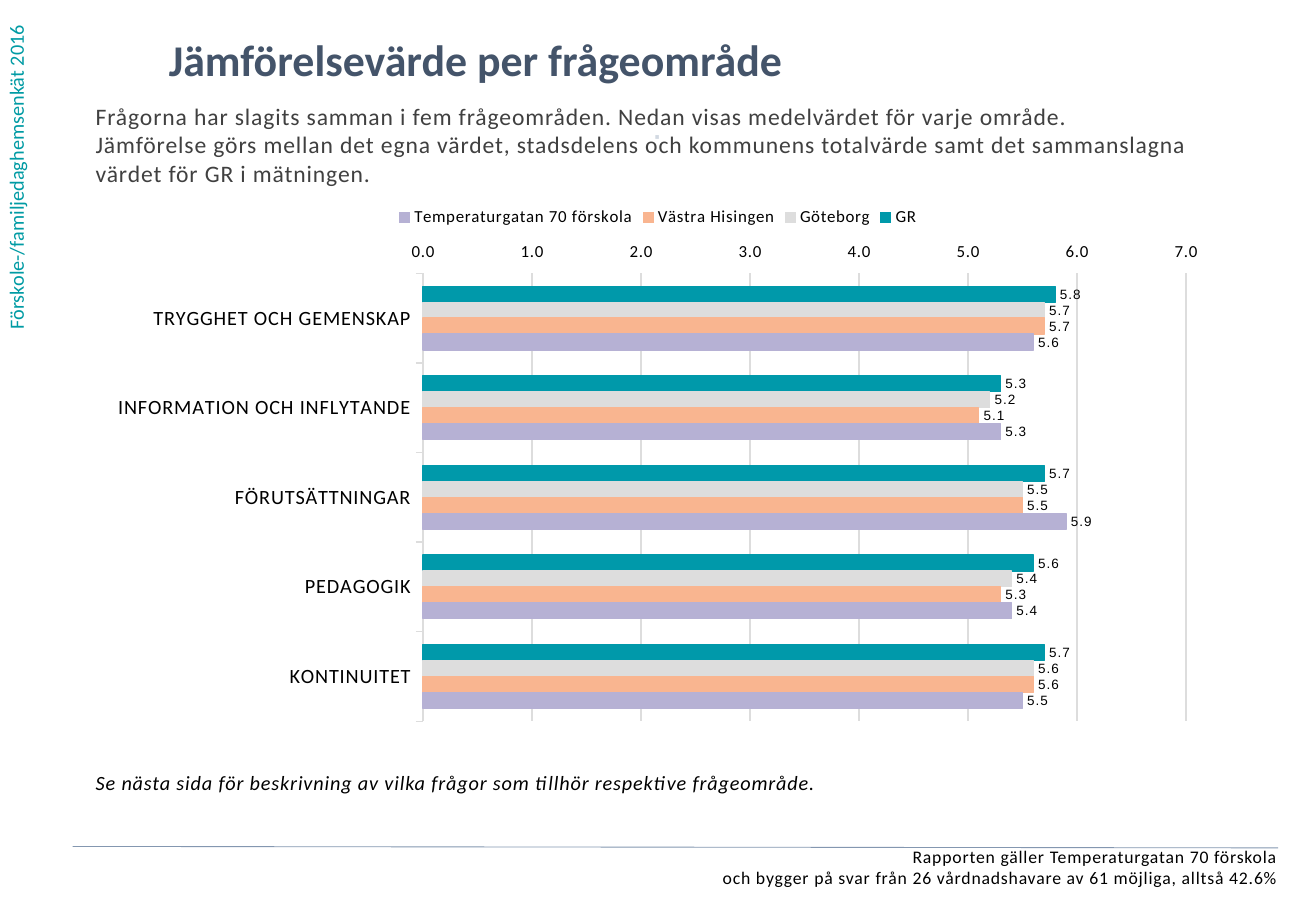
from pptx import Presentation
from pptx.chart.data import CategoryChartData
from pptx.dml.color import RGBColor
from pptx.enum.chart import (XL_AXIS_CROSSES, XL_CHART_TYPE, XL_LABEL_POSITION,
                             XL_LEGEND_POSITION, XL_TICK_MARK)
from pptx.enum.shapes import MSO_CONNECTOR
from pptx.enum.text import PP_ALIGN
from pptx.oxml import parse_xml
from pptx.oxml.ns import nsdecls
from pptx.util import Cm, Pt

BLACK = RGBColor(0x00, 0x00, 0x00)
DARK = RGBColor(0x40, 0x40, 0x40)
NAVY = RGBColor(0x44, 0x54, 0x6A)
STEEL = RGBColor(0x84, 0x97, 0xB0)
PALE = RGBColor(0xD2, 0xD9, 0xE2)
AQUA = RGBColor(0x00, 0x9B, 0xA4)
TEAL = RGBColor(0x00, 0x99, 0xAA)
GREY = RGBColor(0xDD, 0xDD, 0xDD)
PEACH = RGBColor(0xF9, 0xB5, 0x90)
LILAC = RGBColor(0xB6, 0xB1, 0xD4)

AREAS = ["TRYGGHET OCH GEMENSKAP", "INFORMATION OCH INFLYTANDE",
         "FÖRUTSÄTTNINGAR", "PEDAGOGIK", "KONTINUITET"]
SERIES = [
    ("GR", TEAL, (5.8, 5.3, 5.7, 5.6, 5.7)),
    ("Göteborg", GREY, (5.7, 5.2, 5.5, 5.4, 5.6)),
    ("Västra Hisingen", PEACH, (5.7, 5.1, 5.5, 5.3, 5.6)),
    ("Temperaturgatan 70 förskola", LILAC, (5.6, 5.3, 5.9, 5.4, 5.5)),
]
FORMAT = "0.0;0.0"


class Page:
    face = "Calibri"

    def __init__(self, deck):
        self.slide = deck.slides.add_slide(deck.slide_layouts[6])
        self.shapes = self.slide.shapes

    def style(self, font, size, color=BLACK, bold=False, italic=False,
              space=50, face=None):
        font.name = face or self.face
        font.size = Pt(size)
        font.color.rgb = color
        font.bold = bold
        font.italic = italic
        font._rPr.set("spc", str(space))

    def text(self, words, box, size, align=PP_ALIGN.LEFT, inset=True,
             turn=None, **look):
        frame = self.shapes.add_textbox(*map(Cm, box)).text_frame
        frame.word_wrap = True
        if not inset:
            frame.margin_left = frame.margin_right = 0
            frame.margin_top = frame.margin_bottom = 0
        if turn:
            frame._txBody.bodyPr.set("vert", turn)
        para = frame.paragraphs[0]
        para.text = words
        para.alignment = align
        self.style(para.font, size, **look)

    def line(self, ends, color, width):
        rule = self.shapes.add_connector(MSO_CONNECTOR.STRAIGHT, *map(Cm, ends))
        rule.line.color.rgb = color
        rule.line.width = Pt(width)
        rule._element.spPr.append(parse_xml(f"<a:effectLst {nsdecls('a')}/>"))

    def stroke(self, line, color):
        line.color.rgb = color
        line.width = Pt(0.75)

    def bars(self, areas, series, box):
        data = CategoryChartData(number_format=FORMAT)
        data.categories = areas
        for name, _, values in series:
            data.add_series(name, values)
        chart = self.shapes.add_chart(
            XL_CHART_TYPE.BAR_CLUSTERED, *map(Cm, box), data).chart
        self.style(chart.font, 10)
        chart.has_title = False
        chart.has_legend = True
        chart.legend.position = XL_LEGEND_POSITION.TOP
        chart.legend.include_in_layout = False
        self.style(chart.legend.font, 10)

        # Axes
        cat = chart.category_axis
        cat.reverse_order = True
        cat.crosses = XL_AXIS_CROSSES.MAXIMUM
        cat.major_tick_mark = XL_TICK_MARK.OUTSIDE
        self.stroke(cat.format.line, GREY)
        self.style(cat.tick_labels.font, 12)
        val = chart.value_axis
        val.minimum_scale, val.maximum_scale, val.major_unit = 0, 7, 1
        val.major_tick_mark = XL_TICK_MARK.OUTSIDE
        val.format.line.fill.background()
        self.stroke(val.major_gridlines.format.line, GREY)
        val.tick_labels.number_format = FORMAT
        val.tick_labels.number_format_is_linked = False
        self.style(val.tick_labels.font, 10)

        # Bars and their labels
        plot = chart.plots[0]
        plot.gap_width = 162
        plot.overlap = 0
        plot.vary_by_categories = False
        for bar, (_, color, _) in zip(plot.series, series):
            bar.format.fill.solid()
            bar.format.fill.fore_color.rgb = color
            self.stroke(bar.format.line, color)
            labels = bar.data_labels
            labels.show_value = True
            labels.number_format = FORMAT
            labels.number_format_is_linked = False
            labels.position = XL_LABEL_POSITION.OUTSIDE_END
            self.style(labels.font, 8, face="Arial")


def main():
    deck = Presentation()
    deck.slide_width, deck.slide_height = Cm(27.51), Cm(19.05)
    page = Page(deck)

    # Side label and heading
    page.text("Förskole-/familjedaghemsenkät 2016", (-0.05, 0, 1.02, 7.14), 12,
              turn="vert270", color=AQUA, space=0)
    page.text("Jämförelsevärde per frågeområde", (3.53, 0.69, 21.18, 1.45), 26,
              inset=False, color=NAVY, bold=True, space=0)

    # Introduction
    page.text("Frågorna har slagits samman i fem frågeområden. Nedan visas "
              "medelvärdet för varje område.\n"
              "Jämförelse görs mellan det egna värdet, stadsdelens och kommunens "
              "totalvärde samt det sammanslagna värdet för GR i mätningen.",
              (2, 2.13, 24.03, 1.85), 14, inset=False, color=DARK)
    page.text("⋅", (9.83, 2.59, 7.82, 0.99), 12, align=PP_ALIGN.CENTER,
              inset=False, color=PALE, bold=True)

    # Chart and note
    page.bars(AREAS, SERIES, (2, 4.06, 23.5, 11.25))
    page.text("Se nästa sida för beskrivning av vilka frågor som tillhör "
              "respektive frågeområde.", (2, 16.1, 23.5, 0.6), 12,
              inset=False, italic=True)

    # Footer
    page.line((1.52, 17.7, 26.72, 17.73), STEEL, 0.5)
    page.text("Rapporten gäller Temperaturgatan 70 förskola\n"
              "och bygger på svar från 26 vårdnadshavare av 61 möjliga, "
              "alltså 42.6%", (0.3, 17.68, 26.42, 0.9), 10.5,
              align=PP_ALIGN.RIGHT, inset=False)

    deck.save("out.pptx")


if __name__ == "__main__":
    main()
